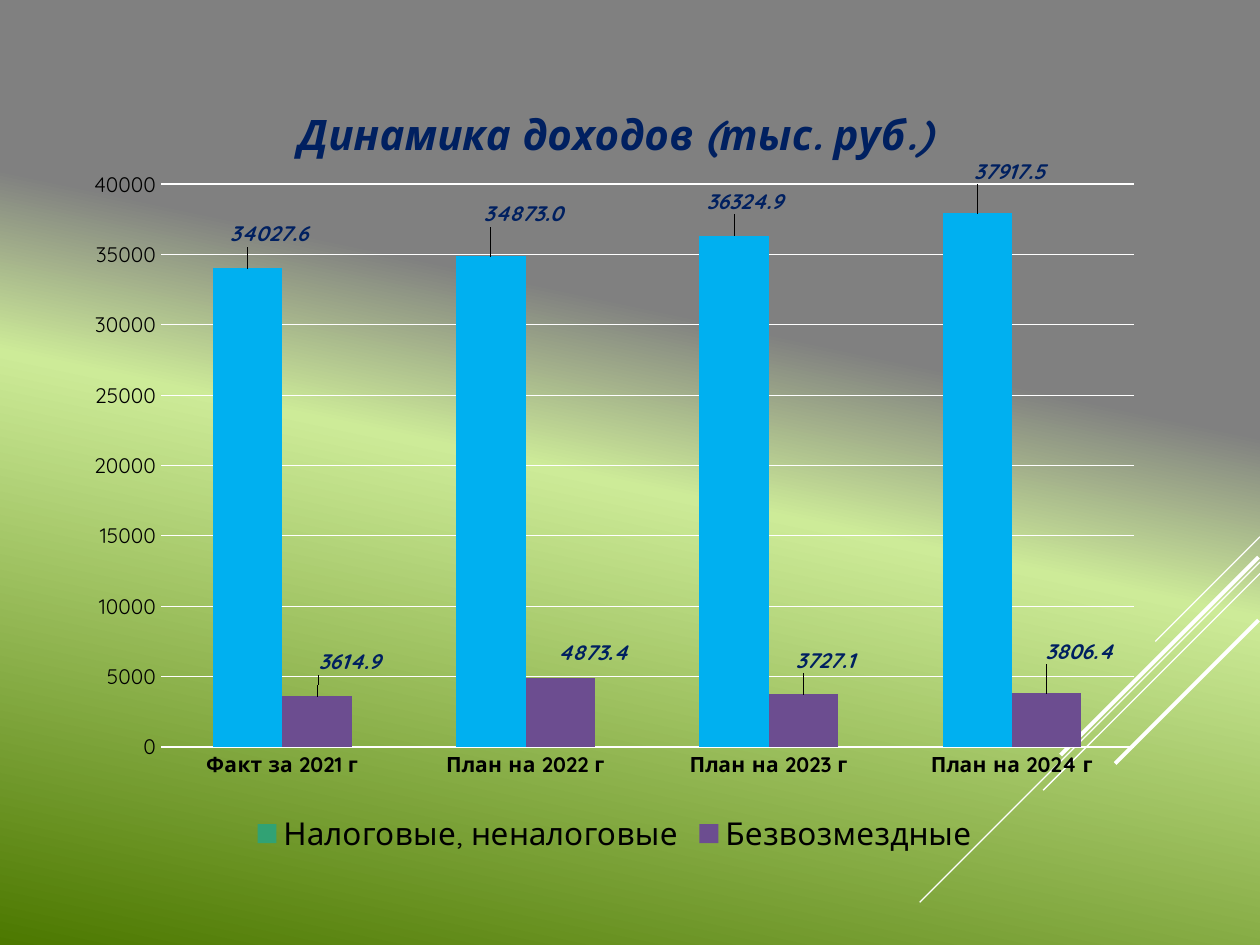
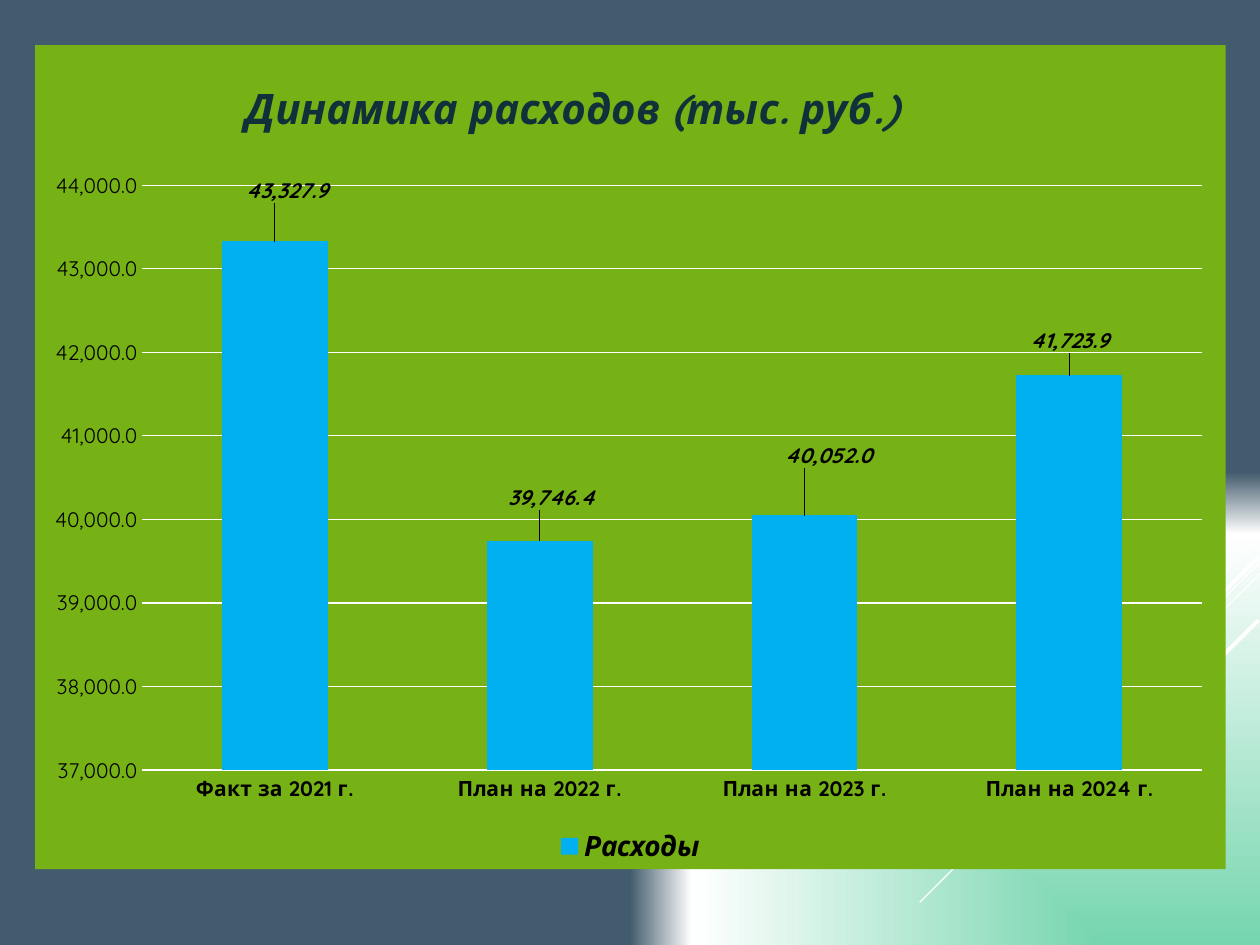
"""Builds two slides showing the yearly dynamics of budget income and spending."""
from lxml import etree
from pptx import Presentation
from pptx import util as u
from pptx.chart.data import CategoryChartData
from pptx.dml.color import RGBColor
from pptx.enum import chart as ch
from pptx.enum import shapes
from pptx.oxml import parse_xml
from pptx.oxml.ns import nsdecls, qn

FONT = "Quicksand"
COLORS = {
    "white": "FFFFFF", "black": "000000", "navy": "002060", "ink": "12303A",
    "sky": "00B0F0", "teal": "31A274", "violet": "6C4D90", "panel": "76B115",
    "gray": "808080", "lime": "CDEB98", "forest": "4C7800",
    "mint": "75D5AE", "slate": "435C6D",
}
STREAKS = [
    (25.4, 10.82, 2.11, 0.75), (25.4, 11.33, 6.86, 0.75), (25.4, 11.56, 4.37, 0.75),
    (25.37, 11.23, 3.99, 2.25), (25.37, 12.5, 2.89, 2.25),
]
INCOME = {
    "box": (1.5, 1.12, 21.79, 16.21),
    "title": "Динамика доходов (тыс. руб.)", "title_color": "navy", "title_at": (0.2, 0.05),
    "plot": (0.08, 0.16, 0.9, 0.7),
    "years": ["Факт за 2021 г", "План на 2022 г", "План на 2023 г", "План на 2024 г"],
    "series": [
        {"name": "Налоговые, неналоговые", "values": [34027.6, 34873, 36324.9, 37917.5],
         "color": "teal", "bar_color": "sky",
         "shifts": [(0.02, -0.02), (0.03, -0.03), (0.01, -0.02), (0.03, -0.03)]},
        {"name": "Безвозмездные", "values": [3614.9, 4873.4, 3727.1, 3806.4],
         "color": "violet",
         "shifts": [(0.03, -0.02), (0.03, -0.01), (0.02, -0.02), (0.03, -0.03)]},
    ],
    "label_color": "navy", "label_format": "0.0",
    "scale": (0, 40000, 5000), "scale_format": "0",
    "legend": {"size": 18}, "fill": None,
}
SPENDING = {
    "box": (0.71, 0.91, 24, 16.61),
    "title": "Динамика расходов (тыс. руб.)", "title_color": "ink", "title_at": (0.17, 0.03),
    "plot": (0.09, 0.17, 0.89, 0.71),
    "years": ["Факт за 2021 г.", "План на 2022 г.", "План на 2023 г.", "План на 2024 г."],
    "series": [
        {"name": "Расходы", "values": [43327.9, 39746.4, 40052, 41723.9], "color": "sky",
         "shifts": [(0.01, -0.04), (0.01, -0.03), (0.02, -0.05), (0, -0.02)]},
    ],
    "label_color": "black", "label_format": "#,##0.0",
    "scale": (37000, 44000, 1000), "scale_format": "#,##0.0",
    "legend": {"size": 16, "bold": True, "italic": True}, "fill": "panel",
}


def rgb(name):
    """Return the named colour."""
    return RGBColor.from_string(COLORS[name])


def style_font(font, size, color="black", bold=False, italic=False):
    """Apply the shared typeface with the given look."""
    font.name, font.size = FONT, u.Pt(size)
    font.bold, font.italic = bold, italic
    font.color.rgb = rgb(color)


def paint_background(slide, stops, direction):
    """Fill the slide background with a gradient."""
    stop_xml = "".join(
        f'<a:gs pos="{percent * 1000}"><a:srgbClr val="{COLORS[color]}"/></a:gs>'
        for percent, color in stops)
    slide.element.cSld.insert(0, parse_xml(
        f'<p:bg {nsdecls("p", "a")}><p:bgPr><a:gradFill rotWithShape="1">'
        f'<a:gsLst>{stop_xml}</a:gsLst>{direction}</a:gradFill>'
        '<a:effectLst/></p:bgPr></p:bg>'))


def draw_streaks(slide):
    """Draw the diagonal white lines in the lower right corner."""
    for x, y, run, weight in STREAKS:
        streak = slide.shapes.add_connector(
            shapes.MSO_CONNECTOR.STRAIGHT, u.Cm(x), u.Cm(y), u.Cm(x - run), u.Cm(y + run))
        streak.line.color.rgb = rgb("white")
        streak.line.width = u.Pt(weight)
        etree.SubElement(streak.element.spPr, qn("a:effectLst"))


def manual_layout(x, y, size=None, mode="edge", inner=False):
    """Return a chart layout element in fractions of the chart."""
    target = '<c:layoutTarget val="inner"/>' if inner else ""
    modes = f'<c:xMode val="{mode}"/><c:yMode val="{mode}"/>' if mode else ""
    extent = f'<c:w val="{size[0]}"/><c:h val="{size[1]}"/>' if size else ""
    return parse_xml(
        f'<c:layout {nsdecls("c")}><c:manualLayout>{target}{modes}'
        f'<c:x val="{x}"/><c:y val="{y}"/>{extent}</c:manualLayout></c:layout>')


def drop_layout(parent):
    """Remove the automatic layout of a chart part."""
    for layout in parent.findall(qn("c:layout")):
        parent.remove(layout)


def style_frame(chart, spec_):
    """Set the chart's own fill and the place of its plot area."""
    space = chart.element if hasattr(chart, "element") else chart._chartSpace
    fill = "<a:noFill/>"
    if spec_["fill"]:
        fill = f'<a:solidFill><a:srgbClr val="{COLORS[spec_["fill"]]}"/></a:solidFill>'
    space.find(qn("c:chart")).addnext(parse_xml(
        f'<c:spPr {nsdecls("c", "a")}>{fill}<a:ln><a:noFill/></a:ln></c:spPr>'))
    plot_area = space.find(qn("c:chart")).find(qn("c:plotArea"))
    drop_layout(plot_area)
    x, y, *size = spec_["plot"]
    plot_area.insert(0, manual_layout(x, y, size, inner=True))


def style_title(chart, spec_):
    """Write and place the chart title."""
    chart.has_title = True
    heading = chart.chart_title.text_frame
    heading.text = spec_["title"]
    style_font(heading.paragraphs[0].runs[0].font, 24, spec_["title_color"], True, True)
    title = chart._chartSpace.find(qn("c:chart")).find(qn("c:title"))
    drop_layout(title)
    title.find(qn("c:tx")).addnext(manual_layout(*spec_["title_at"]))


def style_axes(chart, spec_):
    """Style both axes and the gridlines."""
    for axis, bold in ((chart.category_axis, True), (chart.value_axis, False)):
        axis.major_tick_mark = axis.minor_tick_mark = ch.XL_TICK_MARK.NONE
        axis.format.line.fill.background()
        style_font(axis.tick_labels.font, 12, bold=bold)
    values = chart.value_axis
    values.minimum_scale, values.maximum_scale, values.major_unit = spec_["scale"]
    values.tick_labels.number_format = spec_["scale_format"]
    values.tick_labels.number_format_is_linked = False
    values.has_major_gridlines = True
    values.major_gridlines.format.line.color.rgb = rgb("white")
    values.major_gridlines.format.line.width = u.Pt(0.75)


def style_series(series, figures, spec_):
    """Colour one series and set its shifted value labels."""
    series.format.fill.solid()
    series.format.fill.fore_color.rgb = rgb(figures["color"])
    look = (12, spec_["label_color"], True, True)
    labels = series.data_labels
    labels.show_value = True
    labels.number_format = spec_["label_format"]
    labels.number_format_is_linked = False
    labels.position = ch.XL_LABEL_POSITION.OUTSIDE_END
    style_font(labels.font, *look)
    for index, shift in enumerate(figures["shifts"]):
        point = series.points[index]
        if "bar_color" in figures:
            point.format.fill.solid()
            point.format.fill.fore_color.rgb = rgb(figures["bar_color"])
        point.data_label.position = ch.XL_LABEL_POSITION.OUTSIDE_END
        style_font(point.data_label.font, *look)
    for label, shift in zip(labels._element.findall(qn("c:dLbl")), figures["shifts"]):
        layout = manual_layout(*shift, mode=None)
        label.find(qn("c:idx")).addnext(layout)
        layout.addnext(parse_xml(
            f'<c:numFmt {nsdecls("c")} formatCode="{spec_["label_format"]}" sourceLinked="0"/>'))


def add_dynamics_chart(slide, spec_):
    """Add a column chart of yearly figures inside its box."""
    data = CategoryChartData(number_format=spec_["label_format"])
    data.categories = spec_["years"]
    for figures in spec_["series"]:
        data.add_series(figures["name"], figures["values"])
    chart = slide.shapes.add_chart(
        ch.XL_CHART_TYPE.COLUMN_CLUSTERED, *map(u.Cm, spec_["box"]), data).chart
    style_font(chart.font, 10, "white")
    style_frame(chart, spec_)
    style_title(chart, spec_)
    style_axes(chart, spec_)
    columns = chart.plots[0]
    columns.gap_width, columns.overlap, columns.vary_by_categories = 150, 0, False
    for series, figures in zip(columns.series, spec_["series"]):
        style_series(series, figures, spec_)
    chart.has_legend = True
    chart.legend.position = ch.XL_LEGEND_POSITION.BOTTOM
    chart.legend.include_in_layout = False
    style_font(chart.legend.font, **spec_["legend"])


def add_dynamics_slide(deck, stops, direction, spec_):
    """Add a slide with its background, streaks and chart."""
    slide = deck.slides.add_slide(deck.slide_layouts[6])
    paint_background(slide, stops, direction)
    draw_streaks(slide)
    add_dynamics_chart(slide, spec_)


def main():
    """Build and save the presentation."""
    deck = Presentation()
    deck.slide_width, deck.slide_height = u.Cm(25.4), u.Cm(19.05)
    add_dynamics_slide(
        deck, [(36, "gray"), (51, "lime"), (100, "forest")],
        f'<a:lin ang="{102 * 60000}" scaled="0"/>', INCOME)
    add_dynamics_slide(
        deck, [(0, "mint"), (87, "white"), (100, "slate")],
        '<a:path path="rect"><a:fillToRect l="100000" t="100000"/></a:path>', SPENDING)
    deck.save("out.pptx")


if __name__ == "__main__":
    main()
